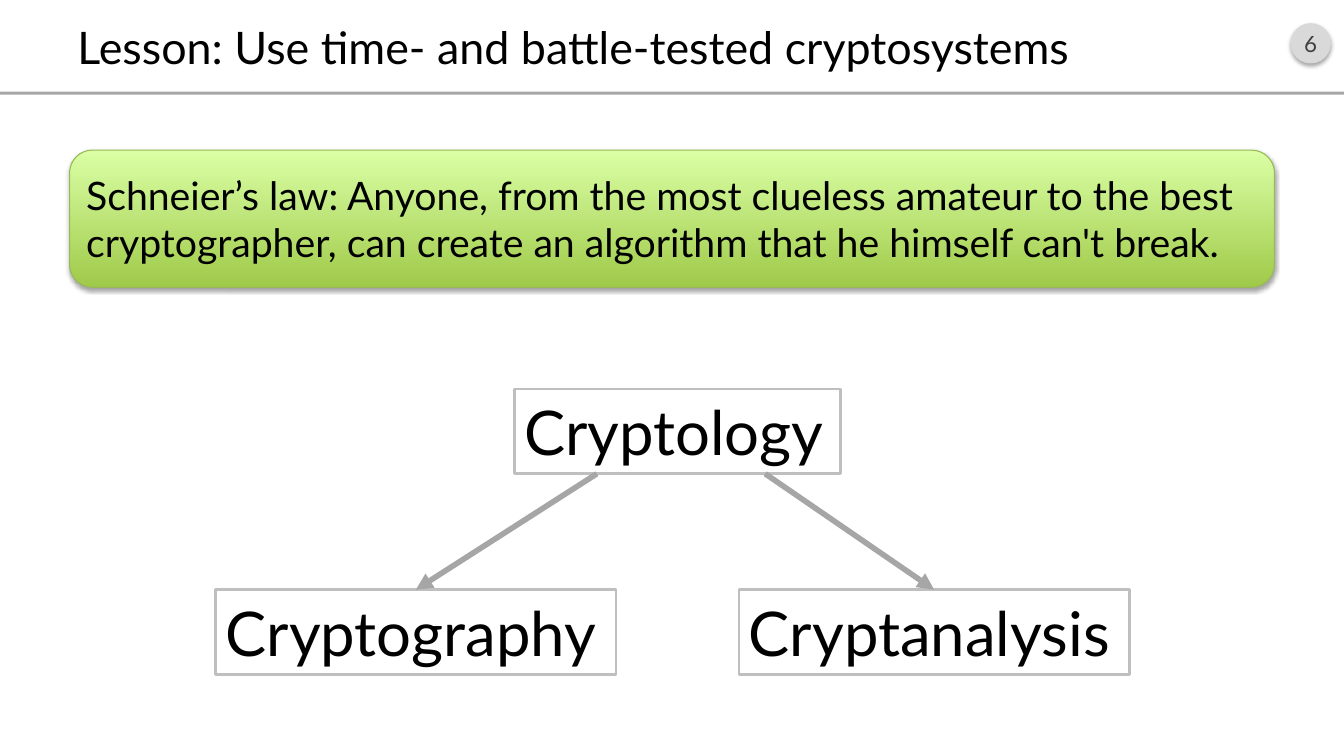
from dataclasses import dataclass

from lxml.etree import SubElement
from pptx import Presentation
from pptx.dml.color import RGBColor
from pptx.enum.shapes import MSO_CONNECTOR as Connector, MSO_SHAPE as Preset
from pptx.enum.text import MSO_ANCHOR as Anchor, PP_ALIGN as Align
from pptx.oxml.ns import qn
from pptx.shapes.autoshape import Shape
from pptx.shapes.shapetree import SlideShapes
from pptx.util import Emu, Pt

EMU_PER_PX = 9144


@dataclass(frozen=True)
class Theme:
    font: str = "Lato"
    ink: str = "000000"
    paper: str = "FFFFFF"
    badge: str = "D9D9D9"
    badge_ink: str = "404040"
    rule: str = "A6A6A6"
    frame: str = "BFBFBF"
    law_bottom: str = "A0CA4A"
    law_top: str = "DAFFA5"
    law_edge: str = "98B955"
    number_size: int = 16
    law_size: int = 28
    title_size: int = 32
    term_size: int = 44


@dataclass(frozen=True)
class Box:
    left: int
    top: int
    width: int
    height: int

    def emu(self) -> list[Emu]:
        return [px(n) for n in (self.left, self.top, self.width, self.height)]


@dataclass(frozen=True)
class Branch:
    term: str
    box: Box
    start_x: int


THEME = Theme()
ROOT = Box(510, 386, 324, 84)
BRANCHES = (
    Branch("Cryptography", Box(214, 585, 397, 84), 592),
    Branch("Cryptanalysis", Box(733, 585, 387, 84), 759),
)


def px(length: int) -> Emu:
    return Emu(length * EMU_PER_PX)


def rgb(color: str) -> RGBColor:
    return RGBColor.from_string(color)


def write(shape: Shape, text: str, *, size: int, color: str = THEME.ink,
          align: Align = Align.LEFT, anchor: Anchor = Anchor.MIDDLE,
          side_inset: int = 10) -> None:
    frame = shape.text_frame
    frame.word_wrap = True
    frame.vertical_anchor = anchor
    frame.margin_left = frame.margin_right = px(side_inset)
    frame.margin_top = frame.margin_bottom = px(5)
    paragraph = frame.paragraphs[0]
    paragraph.alignment = align
    run = paragraph.add_run()
    run.text = text
    run.font.name = THEME.font
    run.font.size = Pt(size)
    run.font.color.rgb = rgb(color)


def add_solid(shapes: SlideShapes, preset: Preset, box: Box, color: str) -> Shape:
    shape = shapes.add_shape(preset, *box.emu())
    shape.shadow.inherit = False
    shape.fill.solid()
    shape.fill.fore_color.rgb = rgb(color)
    shape.line.fill.background()
    return shape


def cast_shadow(shape: Shape) -> None:
    effects = shape._element.spPr.find(qn("a:effectLst"))
    outer = SubElement(effects, qn("a:outerShdw"), blurRad=str(Pt(3.1)),
                       dist=str(Pt(1.8)), dir="5400000", rotWithShape="0")
    black = SubElement(outer, qn("a:srgbClr"), val=THEME.ink)
    SubElement(black, qn("a:alpha"), val="35000")


def add_term(shapes: SlideShapes, term: str, box: Box) -> Shape:
    shape = shapes.add_textbox(*box.emu())
    shape.line.color.rgb = rgb(THEME.frame)
    shape.line.width = Pt(2)
    write(shape, term, size=THEME.term_size, anchor=Anchor.TOP)
    return shape


def add_arrow(shapes: SlideShapes, start_x: int, target: Shape) -> None:
    arrow = shapes.add_connector(Connector.STRAIGHT, px(start_x),
                                 px(ROOT.top + ROOT.height), target.left, target.top)
    arrow.end_connect(target, 0)
    arrow.line.color.rgb = rgb(THEME.rule)
    arrow.line.width = Pt(4)
    SubElement(arrow.line._get_or_add_ln(), qn("a:tailEnd"), type="triangle")
    SubElement(arrow._element.spPr, qn("a:effectLst"))


def add_header(shapes: SlideShapes) -> None:
    badge = add_solid(shapes, Preset.OVAL, Box(1280, 23, 40, 40), THEME.badge)
    cast_shadow(badge)
    write(badge, "6", size=THEME.number_size, color=THEME.badge_ink,
          align=Align.CENTER, side_inset=0)
    add_solid(shapes, Preset.RECTANGLE, Box(0, 91, 1333, 3), THEME.rule)
    title = add_solid(shapes, Preset.RECTANGLE, Box(67, 16, 1200, 60), THEME.paper)
    write(title, "Lesson: Use time- and battle-tested cryptosystems", size=THEME.title_size)


def add_tree(shapes: SlideShapes) -> None:
    add_term(shapes, "Cryptology", ROOT)
    terms = [add_term(shapes, branch.term, branch.box) for branch in BRANCHES]
    for branch, term in zip(BRANCHES, terms):
        add_arrow(shapes, branch.start_x, term)


def add_law(shapes: SlideShapes) -> None:
    law = add_solid(shapes, Preset.ROUNDED_RECTANGLE, Box(69, 149, 1195, 136), THEME.law_top)
    law.fill.gradient()
    law.fill.gradient_angle = 90
    for stop, color, position in zip(law.fill.gradient_stops,
                                     (THEME.law_bottom, THEME.law_top), (0, 1)):
        stop.color.rgb = rgb(color)
        stop.position = position
    law.line.color.rgb = rgb(THEME.law_edge)
    law.line.width = Pt(0.75)
    cast_shadow(law)
    write(law, "Schneier’s law: Anyone, from the most clueless amateur to the best "
               "cryptographer, can create an algorithm that he himself can't break.",
          size=THEME.law_size)


def main() -> None:
    deck = Presentation()
    deck.slide_width, deck.slide_height = px(1333), px(750)
    shapes = deck.slides.add_slide(deck.slide_layouts[6]).shapes
    add_header(shapes)
    add_tree(shapes)
    add_law(shapes)
    deck.save("out.pptx")


if __name__ == "__main__":
    main()
